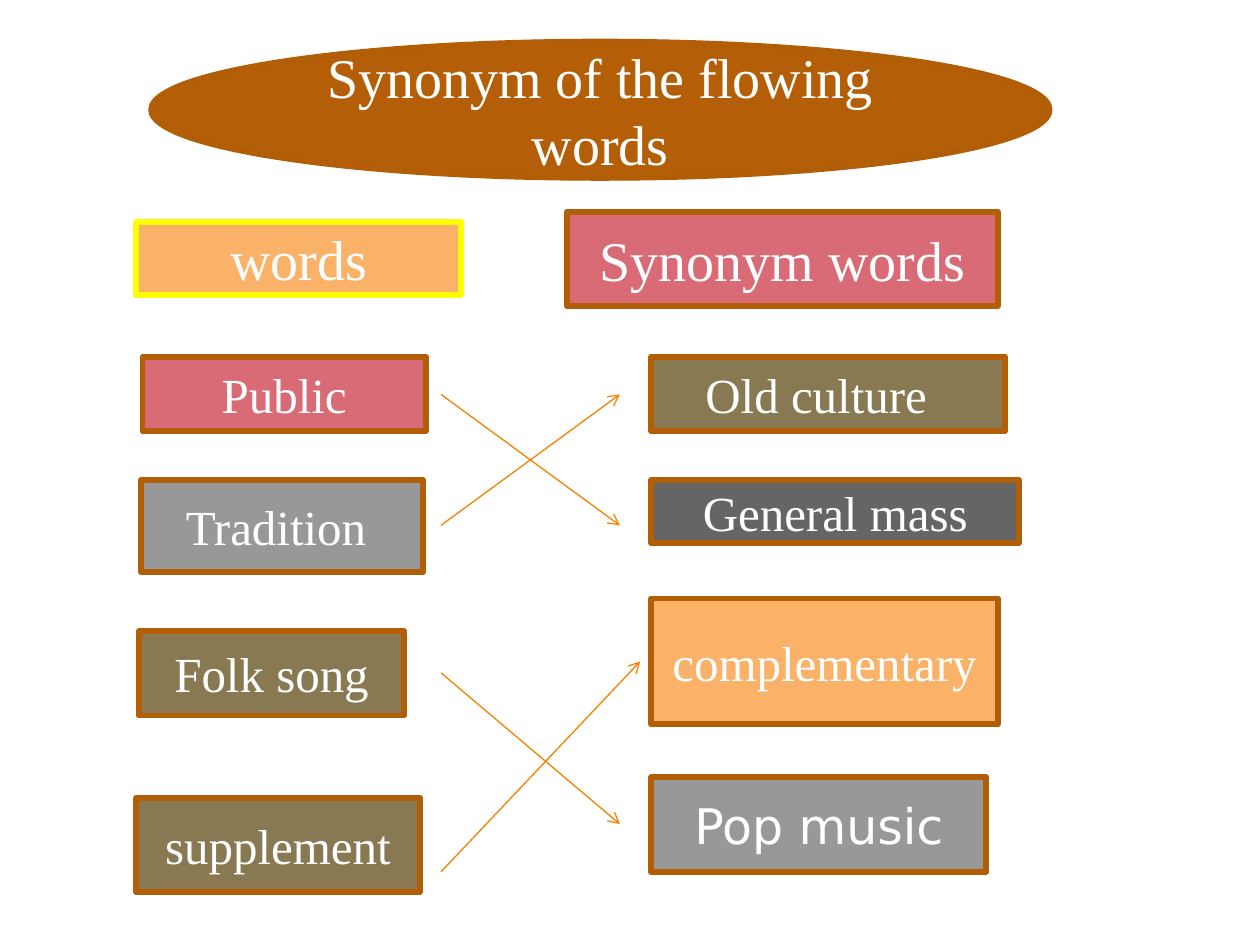
from lxml import etree
from pptx import Presentation
from pptx.dml.color import RGBColor
from pptx.enum.shapes import MSO_CONNECTOR, MSO_SHAPE
from pptx.enum.text import MSO_ANCHOR, PP_ALIGN
from pptx.oxml.ns import qn
from pptx.util import Pt

RECT, OVAL = MSO_SHAPE.RECTANGLE, MSO_SHAPE.OVAL
STRAIGHT = MSO_CONNECTOR.STRAIGHT
MIDDLE, CENTER = MSO_ANCHOR.MIDDLE, PP_ALIGN.CENTER

WHITE = RGBColor(0xFF, 0xFF, 0xFF)
YELLOW = RGBColor(0xFF, 0xFF, 0x00)
BROWN = RGBColor(0xB2, 0x5E, 0x07)
RUST = RGBColor(0xB4, 0x5F, 0x07)
PEACH = RGBColor(0xF9, 0xB2, 0x68)
ROSE = RGBColor(0xD9, 0x6B, 0x77)
OLIVE = RGBColor(0x88, 0x79, 0x52)
GRAY = RGBColor(0x98, 0x98, 0x98)
DARK_GRAY = RGBColor(0x65, 0x65, 0x65)
ORANGE = RGBColor(0xF9, 0x7F, 0x00)

SERIF, SANS = "Times New Roman", "DejaVu Sans"
HEAD, BODY = 32, 28
ANSWER_X = 372.2
ARROW_X, ARROW_END = 252, 354.2

prs = Presentation()
prs.slide_width, prs.slide_height = Pt(720), Pt(540)
s = prs.slides.add_slide(prs.slide_layouts[6])

boxes = [
    ("words", RECT, 77.8, 126.7, 185.8, 41.8, PEACH, YELLOW, HEAD, SERIF),
    ("Synonym words", RECT, 324, 121, 246.2, 54, ROSE, BROWN, HEAD, SERIF),
    ("Synonym of the flowing words", OVAL, 86.4, 23.8, 513.4, 77.8, RUST, BROWN, HEAD, SERIF),
    ("Public", RECT, 81.4, 203.8, 162, 42.5, ROSE, BROWN, BODY, SERIF),
    ("General mass", RECT, ANSWER_X, 274.3, 210.2, 36, DARK_GRAY, BROWN, BODY, SERIF),
    ("Tradition ", RECT, 80.6, 274.3, 161.3, 52.6, GRAY, BROWN, BODY, SERIF),
    ("Old culture  ", RECT, ANSWER_X, 203.8, 202.3, 42.5, OLIVE, BROWN, BODY, SERIF),
    ("Folk song", RECT, 79.2, 360.7, 151.9, 48.2, OLIVE, BROWN, BODY, SERIF),
    ("Pop music", RECT, ANSWER_X, 444.2, 191.5, 54, GRAY, BROWN, BODY, SANS),
    ("supplement", RECT, 77.8, 455.8, 162, 54, OLIVE, BROWN, BODY, SERIF),
    ("complementary", RECT, ANSWER_X, 342, 198, 72, PEACH, BROWN, BODY, SERIF),
]
for text, kind, x, y, w, h, fill, border, size, font in boxes:
    sp = s.shapes.add_shape(kind, Pt(x), Pt(y), Pt(w), Pt(h))
    sp.shadow.inherit = False
    sp.fill.solid()
    sp.fill.fore_color.rgb = fill
    sp.line.color.rgb = border
    sp.line.width = Pt(3.35)
    tf = sp.text_frame
    tf.word_wrap = True
    tf.vertical_anchor = MIDDLE
    p = tf.paragraphs[0]
    p.alignment = CENTER
    r = p.add_run()
    r.text = text
    for name, value in {"name": font, "size": Pt(size)}.items():
        setattr(r.font, name, value)
    r.font.color.rgb = WHITE

arrows = [
    (300.2, ARROW_END, 225.4),
    (225.4, ARROW_END, 300.2),
    (498.2, 365.8, 378),
    (384.5, ARROW_END, 470.9),
]
for y1, x2, y2 in arrows:
    c = s.shapes.add_connector(STRAIGHT, Pt(ARROW_X), Pt(y1), Pt(x2), Pt(y2))
    c.line.color.rgb = ORANGE
    c.line.width = Pt(0.75)
    etree.SubElement(c.line._get_or_add_ln(), qn("a:tailEnd"), type="arrow")
    etree.SubElement(c._element.spPr, qn("a:effectLst"))

prs.save("out.pptx")
